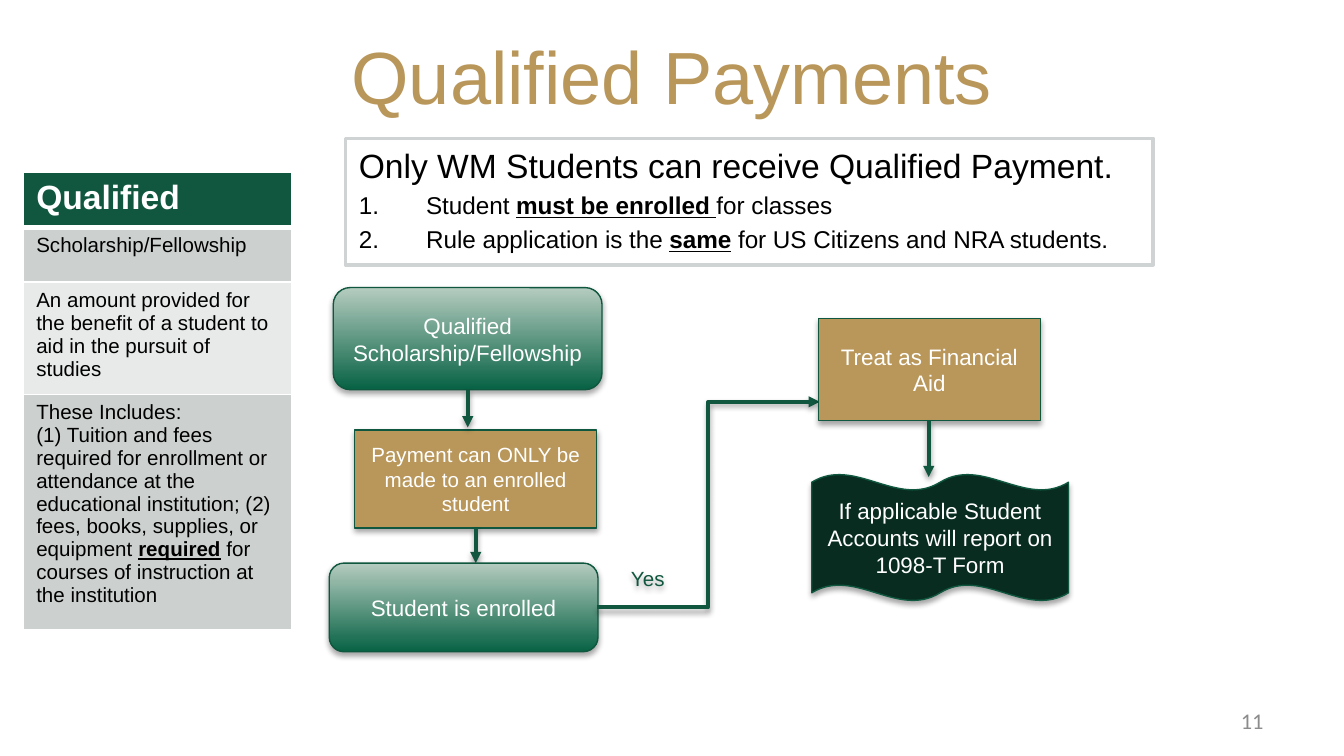
from dataclasses import dataclass

from lxml import etree
from pptx import Presentation
from pptx import util as u
from pptx.dml.color import RGBColor
from pptx.enum import shapes, text
from pptx.oxml.ns import qn


@dataclass(frozen=True)
class Theme:
    font: str = "Arial"
    number_font: str = "Calibri"
    gold: str = "B9975B"
    green: str = "115740"
    outline: str = "0F573F"
    dark: str = "082C20"
    gradient: tuple = ("076244", "B5CCC0")
    frame: str = "D0D3D4"
    bands: tuple = ("CCD1CF", "E7EAE8")
    white: str = "FFFFFF"
    black: str = "000000"
    gray: str = "8C8C8C"
    title: float = 39.6
    heading: float = 18
    item: float = 13
    node: float = 12
    small: float = 11


def rgb(value):
    return RGBColor.from_string(value)


def add_xml(parent, tag, **attributes):
    return etree.SubElement(parent, qn(tag), {k: str(v) for k, v in attributes.items()})


def write(paragraph, content, *, size, color, font=Theme.font, bold=False,
          align=None, before=None):
    """Fill a paragraph; parts between ** marks are bold and underlined."""
    if align is not None:
        paragraph.alignment = align
    if before is not None:
        paragraph.space_before = u.Pt(before)
    for index, part in enumerate(content.split("**")):
        run = paragraph.add_run()
        run.text = part
        marked = index % 2 == 1
        run.font.name, run.font.size = font, u.Pt(size)
        run.font.bold, run.font.underline = bold or marked, marked
        run.font.color.rgb = rgb(color)


class SlideBuilder:
    """Holds the theme and slide; lengths are grid units, 100 columns wide."""
    COLUMNS = 100

    def __init__(self, presentation, theme):
        self.theme = theme
        self.unit = presentation.slide_width / self.COLUMNS
        self.slide = presentation.slides.add_slide(presentation.slide_layouts[1])

    def grid(self, *lengths):
        return [u.Emu(round(length * self.unit)) for length in lengths]

    def place(self, shape, box):
        shape.left, shape.top, shape.width, shape.height = self.grid(*box)

    def shadow(self, shape, opacity=35):
        effects = add_xml(shape._element.spPr, "a:effectLst")
        outer = add_xml(effects, "a:outerShdw", blurRad=u.Pt(3.1), dist=u.Pt(1.8),
                        dir=90 * 60000, rotWithShape=0)
        color = add_xml(outer, "a:srgbClr", val=self.theme.black)
        add_xml(color, "a:alpha", val=opacity * 1000)

    def title(self, content, box):
        shape = self.slide.shapes.title
        self.place(shape, box)
        frame = shape.text_frame
        frame.auto_size = text.MSO_AUTO_SIZE.NONE
        frame.vertical_anchor = text.MSO_ANCHOR.MIDDLE
        write(frame.paragraphs[0], content, size=self.theme.title,
              color=self.theme.gold, align=text.PP_ALIGN.CENTER)

    def numbered_body(self, heading, items, box):
        shape = self.slide.placeholders[1]
        self.place(shape, box)
        shape.fill.solid()
        shape.fill.fore_color.rgb = rgb(self.theme.white)
        shape.line.color.rgb = rgb(self.theme.frame)
        shape.line.width = u.Pt(2)
        frame = shape.text_frame
        frame.auto_size = text.MSO_AUTO_SIZE.NONE
        for index, content in enumerate([heading, *items]):
            paragraph = frame.add_paragraph() if index else frame.paragraphs[0]
            properties = paragraph._p.get_or_add_pPr()
            indent = u.Inches(0.5) if index else 0
            properties.set("marL", str(indent))
            properties.set("indent", str(-indent))
            if index:
                add_xml(properties, "a:buFont", typeface="+mj-lt")
                add_xml(properties, "a:buAutoNum", type="arabicPeriod")
            else:
                add_xml(properties, "a:buNone")
            write(paragraph, content, color=self.theme.black,
                  size=self.theme.item if index else self.theme.heading,
                  before=2.6 if index else 0)

    def table(self, cells, box, row_height):
        """Rows start equal and grow with their text."""
        frame = self.slide.shapes.add_table(len(cells), 1, *self.grid(*box))
        table = frame.table
        table.horz_banding = False
        for index, lines in enumerate(cells):
            header = index == 0
            table.rows[index].height = self.grid(row_height)[0]
            cell = table.cell(index, 0)
            cell.fill.solid()
            cell.fill.fore_color.rgb = rgb(
                self.theme.green if header else self.theme.bands[(index - 1) % 2])
            self.cell_borders(cell, top=3 if index == 1 else 1, bottom=3 if header else 1)
            for number, content in enumerate(lines):
                body = cell.text_frame
                paragraph = body.add_paragraph() if number else body.paragraphs[0]
                write(paragraph, content, bold=header,
                      size=self.theme.heading if header else self.theme.small,
                      color=self.theme.white if header else self.theme.black)
        self.place(frame, box)

    def cell_borders(self, cell, top, bottom):
        properties = cell._tc.get_or_add_tcPr()
        for index, (side, width) in enumerate(zip("LRTB", (1, 1, top, bottom))):
            line = add_xml(properties, f"a:ln{side}", w=u.Pt(width))
            add_xml(add_xml(line, "a:solidFill"), "a:srgbClr", val=self.theme.white)
            properties.insert(index, line)

    def node(self, kind, content, box, fill, size=Theme.node):
        shape = self.slide.shapes.add_shape(kind, *self.grid(*box))
        if isinstance(fill, tuple):
            shape.fill.gradient()
            shape.fill.gradient_angle = 90
            for position, (stop, color) in enumerate(zip(shape.fill.gradient_stops, fill)):
                stop.position, stop.color.rgb = position, rgb(color)
        else:
            shape.fill.solid()
            shape.fill.fore_color.rgb = rgb(fill)
        shape.line.color.rgb = rgb(self.theme.outline)
        shape.line.width = u.Pt(0.75)
        self.shadow(shape)
        shape.text_frame.vertical_anchor = text.MSO_ANCHOR.MIDDLE
        write(shape.text_frame.paragraphs[0], content, size=size,
              color=self.theme.white, align=text.PP_ALIGN.CENTER)

    def arrow(self, start, end, kind=shapes.MSO_CONNECTOR.STRAIGHT):
        connector = self.slide.shapes.add_connector(kind, *self.grid(*start, *end))
        connector.line.color.rgb = rgb(self.theme.green)
        connector.line.width = u.Pt(2)
        add_xml(connector.line._get_or_add_ln(), "a:tailEnd", type="triangle")
        self.shadow(connector, opacity=38)

    def label(self, content, box, shadow=False, **style):
        shape = self.slide.shapes.add_textbox(*self.grid(*box))
        if shadow:
            self.shadow(shape)
        shape.text_frame.word_wrap = True
        shape.text_frame.vertical_anchor = text.MSO_ANCHOR.MIDDLE
        write(shape.text_frame.paragraphs[0], content, **style)


def main():
    presentation = Presentation()
    presentation.slide_width = u.Inches(10)
    presentation.slide_height = presentation.slide_width * 9 // 16
    theme = Theme()
    builder = SlideBuilder(presentation, theme)
    kinds = shapes.MSO_SHAPE

    # Title, rules and page number
    builder.title("Qualified Payments", (5, 2.3, 90, 6.6))
    builder.numbered_body(
        "Only WM Students can receive Qualified Payment.",
        ["Student **must be enrolled **for classes",
         "Rule application is the **same** for US Citizens and NRA students."],
        (25.7, 10.3, 60.1, 9.4))
    builder.label("11", (71.7, 52.1, 23.3, 3), size=theme.node, color=theme.gray,
                  font=theme.number_font, align=text.PP_ALIGN.RIGHT)

    # Definition table
    builder.table(
        [["Qualified"],
         ["Scholarship/Fellowship"],
         ["An amount provided for the benefit of a student to aid in the pursuit of studies"],
         ["These Includes:",
          "(1) Tuition and fees required for enrollment or attendance at the educational "
          "institution; (2) fees, books, supplies, or equipment **required** for courses "
          "of instruction at the institution"]],
        (1.7, 12.8, 20, 33.9), row_height=4.1)

    # Flow from payment to enrolled student
    builder.node(kinds.RECTANGLE, "Payment can ONLY be made to an enrolled student",
                 (26.4, 32, 18, 7.3), theme.gold, theme.small)
    builder.arrow((35.4, 39.3), (35.4, 41.9))
    builder.node(kinds.ROUNDED_RECTANGLE, "Qualified Scholarship/Fellowship",
                 (24.8, 21.4, 20, 7.6), theme.gradient)
    builder.arrow((34.8, 29), (34.8, 31.8))
    builder.node(kinds.ROUNDED_RECTANGLE, "Student is enrolled",
                 (24.5, 41.9, 20, 6.6), theme.gradient)

    # Flow from enrolled student to reporting
    builder.arrow((44.4, 45.2), (61, 29.9), shapes.MSO_CONNECTOR.ELBOW)
    builder.node(kinds.RECTANGLE, "Treat as Financial Aid", (60.9, 23.7, 16.5, 7.6), theme.gold)
    builder.arrow((69.1, 31.3), (69.1, 35.5))
    builder.node(kinds.DOUBLE_WAVE, "If applicable Student Accounts will report on 1098-T Form",
                 (60.4, 35.3, 19.1, 9.4), theme.dark)
    builder.label("Yes", (45.5, 41.4, 5.4, 3.3), shadow=True, size=theme.small,
                  color=theme.green, align=text.PP_ALIGN.CENTER)

    presentation.save("out.pptx")


if __name__ == "__main__":
    main()
